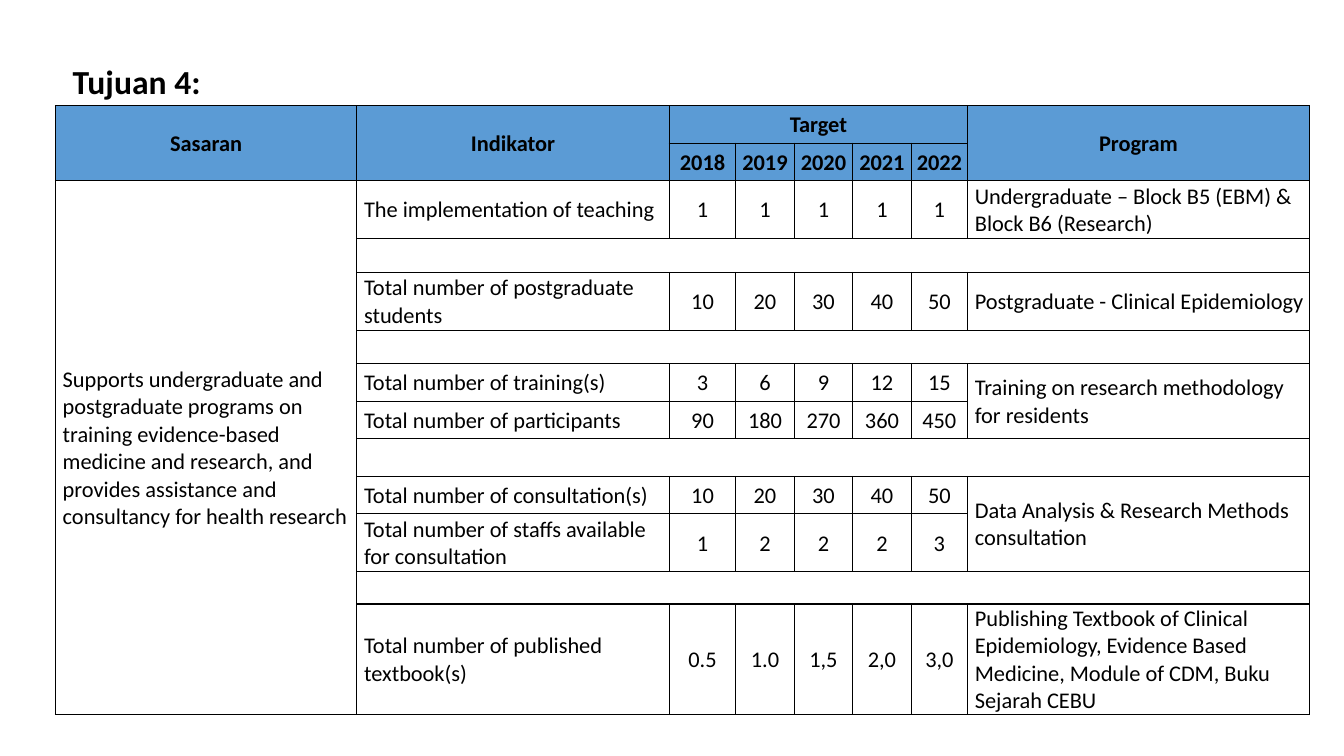
"""Build the slide with the targets table for the fourth goal."""
from lxml.etree import SubElement
from pptx import Presentation
from pptx.dml.color import RGBColor
from pptx.enum.text import MSO_ANCHOR, MSO_AUTO_SIZE, PP_ALIGN
from pptx.oxml.ns import qn
from pptx.util import Pt

BLACK = RGBColor(0x00, 0x00, 0x00)
WHITE = RGBColor(0xFF, 0xFF, 0xFF)
BLUE = RGBColor(0x5B, 0x9B, 0xD5)
FONT = "Calibri"

WIDTHS = [215.28, 223.2, 47.52, 41.76, 41.76, 41.76, 40.32, 244.08]
HEIGHTS = [26.8, 26.8, 41.4, 24, 41.4, 24, 26.8, 26.8, 26.8, 26.8, 41.4, 23, 79.2]
HEADS = 2
SPANS = [
    (0, 0, 1, 0), (0, 1, 1, 1), (0, 2, 0, 6), (0, 7, 1, 7),
    (2, 0, 12, 0), (6, 7, 7, 7), (9, 7, 10, 7),
]
GOAL = (
    "Supports undergraduate and postgraduate programs on training evidence-based "
    "medicine and research, and provides assistance and consultancy for health research"
)
GAP = []
ROWS = [
    ["Sasaran", "Indikator", "Target", "", "", "", "", "Program"],
    ["", "", "2018", "2019", "2020", "2021", "2022", ""],
    [GOAL, "The implementation of teaching", "1", "1", "1", "1", "1",
     "Undergraduate – Block B5 (EBM) & Block B6 (Research)"],
    GAP,
    ["", "Total number of postgraduate students", "10", "20", "30", "40", "50",
     "Postgraduate - Clinical Epidemiology"],
    GAP,
    ["", "Total number of training(s)", "3", "6", "9", "12", "15",
     "Training on research methodology for residents"],
    ["", "Total number of participants", "90", "180", "270", "360", "450", ""],
    GAP,
    ["", "Total number of consultation(s)", "10", "20", "30", "40", "50",
     "Data Analysis & Research Methods consultation"],
    ["", "Total number of staffs available for consultation", "1", "2", "2", "2", "3", ""],
    GAP,
    ["", "Total number of published textbook(s)", "0.5", "1.0", "1,5", "2,0", "3,0",
     "Publishing Textbook of Clinical Epidemiology, Evidence Based Medicine, "
     "Module of CDM, Buku Sejarah CEBU"],
]


def style(par, size, bold):
    """Format every run of a paragraph."""
    for run in par.runs:
        run.font.name = FONT
        run.font.size = Pt(size)
        run.font.bold = bold
        run.font.color.rgb = BLACK


def add_title(slide, text):
    """Place and format the title."""
    title = slide.shapes.title
    title.left, title.top = Pt(44.64), Pt(25.92)
    title.width, title.height = Pt(828), Pt(66.96)
    frame = title.text_frame
    frame.text = text
    frame.auto_size = MSO_AUTO_SIZE.NONE
    frame.vertical_anchor = MSO_ANCHOR.MIDDLE
    par = frame.paragraphs[0]
    par.alignment = PP_ALIGN.LEFT
    par.line_spacing = 0.9
    style(par, 24, True)


def add_edges(cell, sides):
    """Draw the named sides of a cell and clear the others."""
    props = cell._tc.get_or_add_tcPr()
    for side in "LRTB":
        line = SubElement(props, qn(f"a:ln{side}"), w=str(Pt(1)))
        if side in sides:
            fill = SubElement(line, qn("a:solidFill"))
            SubElement(fill, qn("a:srgbClr"), val=str(BLACK))
        else:
            SubElement(line, qn("a:noFill"))


def fill_cell(cell, text, head, center):
    """Set the fill, insets and text of a cell."""
    cell.fill.solid()
    cell.fill.fore_color.rgb = BLUE if head else WHITE
    cell.margin_left = cell.margin_right = cell.margin_top = Pt(0.72)
    cell.margin_bottom = Pt(0)
    cell.vertical_anchor = MSO_ANCHOR.MIDDLE
    if text:
        cell.text_frame.text = text
        par = cell.text_frame.paragraphs[0]
        par.alignment = PP_ALIGN.CENTER if center else PP_ALIGN.LEFT
        if not center:
            par._p.get_or_add_pPr().set("marL", str(Pt(4.5)))
        style(par, 16, head)


def add_grid(slide):
    """Add the table of targets."""
    count = len(WIDTHS)
    frame = slide.shapes.add_table(
        len(ROWS), count, Pt(39.6), Pt(75.6), Pt(sum(WIDTHS)), Pt(sum(HEIGHTS)))
    table = frame.table
    table.first_row = table.horz_banding = False
    for col, width in zip(table.columns, WIDTHS):
        col.width = Pt(width)
    for row, height in zip(table.rows, HEIGHTS):
        row.height = Pt(height)
    for r, texts in enumerate(ROWS):
        head = r < HEADS
        for c, text in enumerate(texts or [""] * count):
            cell = table.cell(r, c)
            sides = "LRTB"
            if not texts and c > 0:
                sides = "TB" + {1: "L", count - 1: "R"}.get(c, "")
            add_edges(cell, sides)
            fill_cell(cell, text, head, head or 2 <= c <= 6)
    for top, left, low, right in SPANS:
        table.cell(top, left).merge(table.cell(low, right))


def main():
    """Build and save the slide."""
    deck = Presentation()
    deck.slide_width, deck.slide_height = Pt(960), Pt(540)
    slide = deck.slides.add_slide(deck.slide_layouts[5])
    add_title(slide, "Tujuan 4:")
    add_grid(slide)
    deck.save("out.pptx")


if __name__ == "__main__":
    main()
